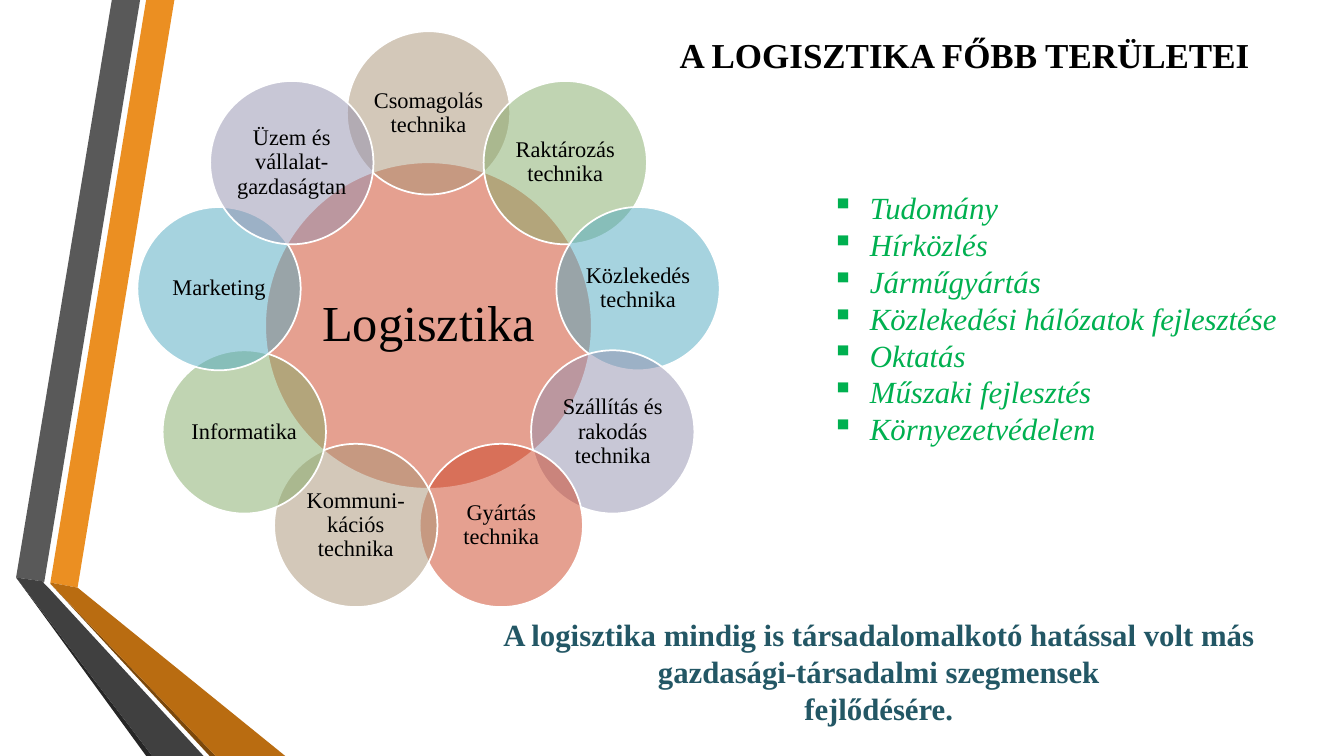
import math
from typing import NamedTuple

from lxml import etree
from pptx import Presentation
from pptx import util as u
from pptx.dml import color
from pptx.enum import shapes, text
from pptx.oxml import ns

FONT = "Times New Roman"
COLORS = {
    "white": "FFFFFF", "black": "000000", "green": "00B050", "teal": "235765",
    "orange": "EB8F22", "dark_orange": "B96C11", "brown": "7B480B",
    "gray": "595959", "dark_gray": "404040", "charcoal": "262626",
    "red": "CD4223", "sand": "A89374", "leaf": "83AA67", "sky": "4FA9C1",
    "lilac": "9390AF",
}
CENTER_X, CENTER_Y = 4.25, 3.23
RING_RADIUS = 2.11
HUB_SIZE, PETAL_SIZE = 3.24, 1.62


class Ribbon(NamedTuple):
    color: str
    points: list[tuple[float, float]]


class Circle(NamedTuple):
    label: str
    color: str
    x: float
    y: float
    size: float
    font_size: int
    inset: float


class TextBlock(NamedTuple):
    lines: list[str]
    box: tuple[float, float, float, float]
    style: dict


RIBBONS = [
    Ribbon("orange", [(0.5, 5.78), (0.77, 5.83), (1.73, 0), (1.45, 0)]),
    Ribbon("gray", [(1.39, 0), (1.11, 0), (0.16, 5.73), (0.44, 5.77)]),
    Ribbon("charcoal", [(0.16, 5.73), (1.45, 7.5), (1.51, 7.5)]),
    Ribbon("brown", [(0.5, 5.79), (2.08, 7.5), (2.14, 7.5)]),
    Ribbon("dark_orange", [(0.5, 5.78), (0.5, 5.79), (2.14, 7.5), (2.83, 7.5), (0.77, 5.83)]),
    Ribbon("dark_gray", [(2.02, 7.5), (0.48, 5.83), (0.43, 5.78), (0.44, 5.77),
                         (0.16, 5.73), (1.51, 7.5)]),
]

HUB = Circle("Logisztika", "red", CENTER_X, CENTER_Y, HUB_SIZE, 36, 0.05)
PETAL_COLORS = ["sand", "leaf", "sky", "lilac", "red", "sand", "leaf", "sky", "lilac"]
PETAL_LABELS = [
    "Csomagolás technika", "Raktározás technika", "Közlekedés technika",
    "Szállítás és rakodás technika", "Gyártás technika", "Kommuni-kációs technika",
    "Informatika", "Marketing", "Üzem és vállalat-gazdaságtan",
]

TEXT_BLOCKS = [
    TextBlock(["A LOGISZTIKA FŐBB TERÜLETEI"], (5.38, 0.28, 8.37, 0.52),
              dict(size=25, bold=True, centered=True)),
    TextBlock(["Tudomány", "Hírközlés", "Járműgyártás", "Közlekedési hálózatok fejlesztése",
               "Oktatás", "Műszaki fejlesztés", "Környezetvédelem"],
              (8.15, 1.82, 4.65, 2.69),
              dict(size=22, color_name="green", italic=True, bullet="▪")),
    TextBlock(["A logisztika mindig is társadalomalkotó hatással volt más "
               "gazdasági-társadalmi szegmensek", "fejlődésére."],
              (4.52, 6.06, 8.39, 1.21),
              dict(size=22, color_name="teal", bold=True, centered=True)),
]


def rgb(name: str) -> color.RGBColor:
    return color.RGBColor.from_string(COLORS[name])


def write_text(frame, lines: list[str], *, size: int, color_name: str = "black",
               bold: bool = False, italic: bool = False, centered: bool = False,
               line_spacing: float = 1.0, bullet: str = "") -> None:
    frame.word_wrap = True
    for index, line in enumerate(lines):
        paragraph = frame.add_paragraph() if index else frame.paragraphs[0]
        paragraph.alignment = text.PP_ALIGN.CENTER if centered else text.PP_ALIGN.LEFT
        paragraph.line_spacing = line_spacing
        run = paragraph.add_run()
        run.text = line
        font = run.font
        font.name, font.size = FONT, u.Pt(size)
        font.bold, font.italic = bold, italic
        font.color.rgb = rgb(color_name)
        if bullet:
            properties = paragraph._p.get_or_add_pPr()
            properties.set("marL", str(u.Inches(0.38)))
            properties.set("indent", str(u.Inches(-0.38)))
            etree.SubElement(properties, ns.qn("a:buChar")).set("char", bullet)


def draw_ribbon(slide, ribbon: Ribbon) -> None:
    points = [(u.Inches(x), u.Inches(y)) for x, y in ribbon.points]
    builder = slide.shapes.build_freeform(*points[0])
    builder.add_line_segments(points[1:], close=True)
    shape = builder.convert_to_shape()
    shape.shadow.inherit = False
    shape.fill.solid()
    shape.fill.fore_color.rgb = rgb(ribbon.color)
    shape.line.fill.background()


def draw_circle(slide, circle: Circle) -> None:
    shape = slide.shapes.add_shape(
        shapes.MSO_SHAPE.OVAL,
        u.Inches(circle.x - circle.size / 2), u.Inches(circle.y - circle.size / 2),
        u.Inches(circle.size), u.Inches(circle.size))
    shape.shadow.inherit = False
    shape.fill.solid()
    shape.fill.fore_color.rgb = rgb(circle.color)
    fill_color = shape._element.spPr.find(".//" + ns.qn("a:srgbClr"))
    etree.SubElement(fill_color, ns.qn("a:alpha")).set("val", "50000")
    shape.line.color.rgb = rgb("white")
    shape.line.width = u.Pt(1.25)
    frame = shape.text_frame
    frame.margin_left = frame.margin_right = u.Inches(circle.inset)
    frame.margin_top = frame.margin_bottom = u.Inches(circle.inset)
    frame.vertical_anchor = text.MSO_ANCHOR.MIDDLE
    write_text(frame, [circle.label], size=circle.font_size, centered=True, line_spacing=0.9)


def draw_text_block(slide, block: TextBlock) -> None:
    frame = slide.shapes.add_textbox(*map(u.Inches, block.box)).text_frame
    frame.auto_size = text.MSO_AUTO_SIZE.SHAPE_TO_FIT_TEXT
    write_text(frame, block.lines, **block.style)


def petals() -> list[Circle]:
    step = math.tau / len(PETAL_LABELS)
    return [
        Circle(label, color_name,
               CENTER_X + RING_RADIUS * math.sin(index * step),
               CENTER_Y - RING_RADIUS * math.cos(index * step),
               PETAL_SIZE, 16, 0.02)
        for index, (label, color_name) in enumerate(zip(PETAL_LABELS, PETAL_COLORS))
    ]


def main() -> None:
    presentation = Presentation()
    presentation.slide_width = u.Inches(13.33)
    presentation.slide_height = u.Inches(7.5)
    slide = presentation.slides.add_slide(presentation.slide_layouts[6])
    for ribbon in RIBBONS:
        draw_ribbon(slide, ribbon)
    for circle in [HUB, *petals()]:
        draw_circle(slide, circle)
    for block in TEXT_BLOCKS:
        draw_text_block(slide, block)
    presentation.save("out.pptx")


if __name__ == "__main__":
    main()
